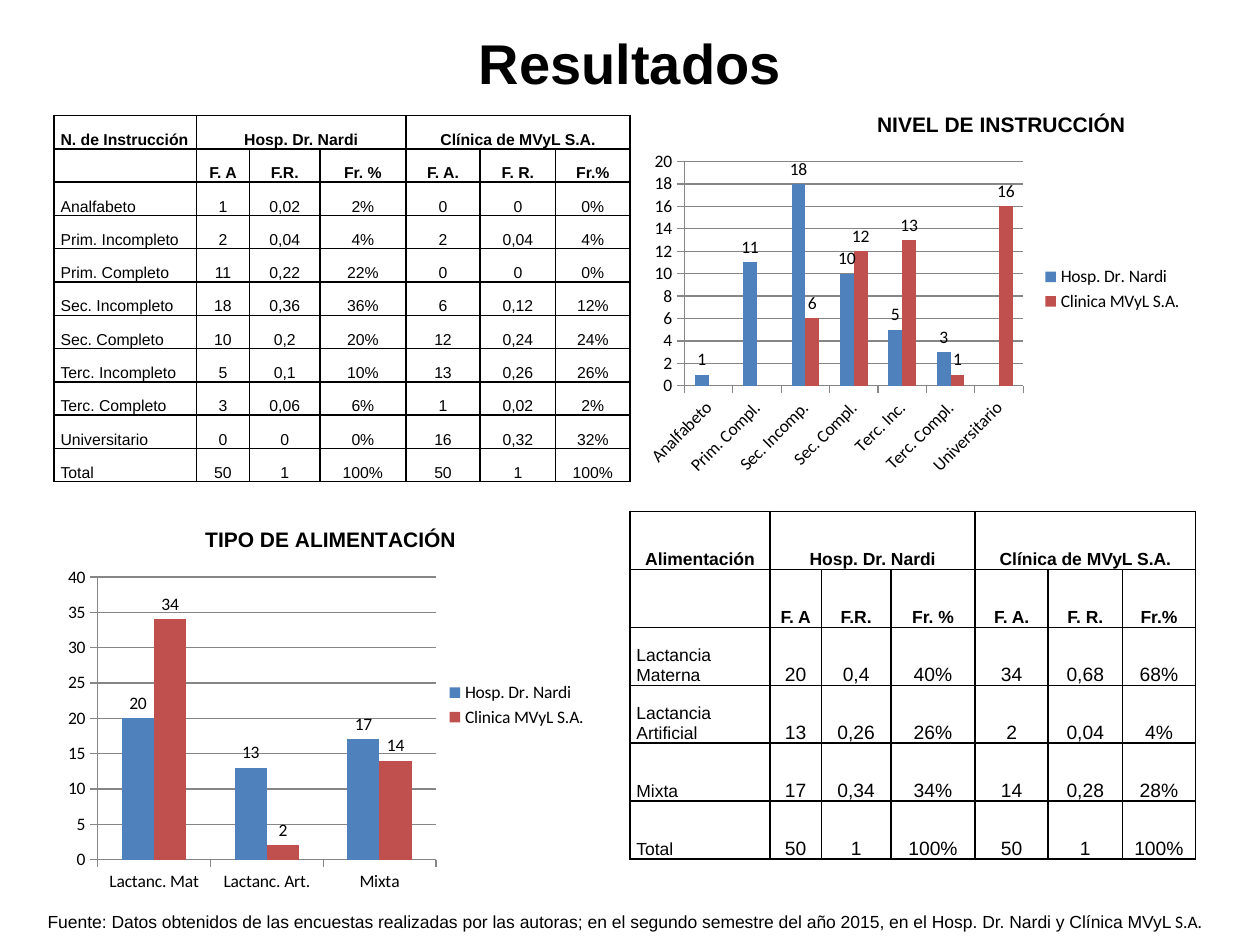
import dataclasses

import lxml.etree as etree
import pptx
import pptx.chart.data
import pptx.dml.color
import pptx.enum.chart
import pptx.enum.text
import pptx.oxml.ns
import pptx.util

Cm = pptx.util.Cm
Pt = pptx.util.Pt
RGB = pptx.dml.color.RGBColor
qn = pptx.oxml.ns.qn
ALIGN = pptx.enum.text.PP_ALIGN
ANCHOR = pptx.enum.text.MSO_ANCHOR


@dataclasses.dataclass(frozen=True)
class Theme:
    head_font: str = "Arial"
    chart_font: str = "Calibri"
    ink: str = "000000"
    axis: str = "868686"
    series: tuple = ("4F81BD", "C0504D")
    title: int = 32
    chart_title: int = 12
    text: int = 10


THEME = Theme()
HOSPITAL = "Hosp. Dr. Nardi"
CLINIC = "MVyL S.A."
SERIES_NAMES = (HOSPITAL, "Clinica " + CLINIC)
SAMPLE = 50  # people surveyed at each centre


def style_font(font, size, name=THEME.head_font, bold=False):
    font.name, font.size, font.bold = name, Pt(size), bold
    font.color.rgb = RGB.from_string(THEME.ink)


def add_run(p, text, size, name=THEME.head_font, bold=False):
    r = p.add_run()
    r.text = text
    style_font(r.font, size, name, bold)


def add_title(slide, box, text):
    sp = slide.shapes.title
    sp.left, sp.top, sp.width, sp.height = map(Cm, box)
    tf = sp.text_frame
    tf.vertical_anchor = ANCHOR.MIDDLE
    p = tf.paragraphs[0]
    p.alignment = ALIGN.CENTER
    add_run(p, text, THEME.title, bold=True)


def add_source(slide, box, parts):
    tf = slide.shapes.add_textbox(*map(Cm, box)).text_frame
    tf.word_wrap = True
    tf.margin_right = 0
    for text, name in parts:
        add_run(tf.paragraphs[0], text, THEME.text, name)


# Tables
def set_borders(cell):
    tc_pr = cell._tc.get_or_add_tcPr()
    for i, side in enumerate(("lnL", "lnR", "lnT", "lnB")):
        ln = etree.Element(qn("a:" + side), w=str(Pt(1)))
        fill = etree.SubElement(ln, qn("a:solidFill"))
        etree.SubElement(fill, qn("a:srgbClr"), val=THEME.ink)
        tc_pr.insert(i, ln)


def fill_cell(cell, text, size, bold, align, spacing):
    cell.fill.background()
    cell.vertical_anchor = ANCHOR.BOTTOM
    cell.margin_left = cell.margin_right = Cm(0.13)
    cell.margin_top = cell.margin_bottom = 0
    set_borders(cell)
    p = cell.text_frame.paragraphs[0]
    p.alignment = align
    p.line_spacing = spacing
    if text:
        add_run(p, text, size, bold=bold)
    else:
        etree.SubElement(p._p, qn("a:endParaRPr"), sz=str(size * 100))


def frequencies(count):
    share = count / SAMPLE
    return [str(count), f"{share:g}".replace(".", ","), f"{share:.0%}"]


def add_frequency_table(slide, box, heading, counts, widths, label_size,
                        number_size, spacing, heading_align):
    rows = [[heading, HOSPITAL, "", "", "Clínica de " + CLINIC, "", ""],
            ["", "F. A", "F.R.", "Fr. %", "F. A.", "F. R.", "Fr.%"]]
    for label, hospital, clinic in counts + [("Total", SAMPLE, SAMPLE)]:
        rows.append([label] + frequencies(hospital) + frequencies(clinic))

    table = slide.shapes.add_table(len(rows), len(widths), *map(Cm, box)).table
    table.first_row = table.horz_banding = False
    for column, width in zip(table.columns, widths):
        column.width = Cm(width)
    for i, row in enumerate(rows):
        table.rows[i].height = Cm(box[3] / len(rows))
        for j, text in enumerate(row):
            head = i < 2
            size = label_size if head or j == 0 else number_size
            align = ALIGN.CENTER if j else heading_align if head else ALIGN.LEFT
            fill_cell(table.cell(i, j), text, size, head, align, spacing)
    for j in (1, 4):
        table.cell(0, j).merge(table.cell(0, j + 2))


# Charts
def set_layout(parent, index, inner=False, **fractions):
    for old in parent.findall(qn("c:layout")):
        parent.remove(old)
    layout = etree.Element(qn("c:layout"))
    manual = etree.SubElement(layout, qn("c:manualLayout"))
    if inner:
        etree.SubElement(manual, qn("c:layoutTarget"), val="inner")
    for key in ("xMode", "yMode"):
        etree.SubElement(manual, qn("c:" + key), val="edge")
    for key, value in fractions.items():
        etree.SubElement(manual, qn("c:" + key), val=str(value))
    parent.insert(index, layout)


def add_column_chart(slide, box, title, categories, values, top, step,
                     title_x, plot, tilted=False):
    data = pptx.chart.data.CategoryChartData()
    data.categories = categories
    for name, series_values in zip(SERIES_NAMES, values):
        data.add_series(name, series_values)
    kind = pptx.enum.chart.XL_CHART_TYPE.COLUMN_CLUSTERED
    chart = slide.shapes.add_chart(kind, *map(Cm, box), data).chart
    style_font(chart.font, THEME.text, THEME.chart_font)

    chart.has_title = True
    p = chart.chart_title.text_frame.paragraphs[0]
    add_run(p, title, THEME.chart_title, bold=True)
    set_layout(chart.chart_title._element, 1, x=title_x, y=0.03)
    x, y, w, h = plot
    plot_area = chart._chartSpace.chart.plotArea
    set_layout(plot_area, 0, inner=True, x=x, y=y, w=w, h=h)

    chart.has_legend = True
    chart.legend.position = pptx.enum.chart.XL_LEGEND_POSITION.RIGHT
    chart.legend.include_in_layout = False

    # Axes
    value_axis, category_axis = chart.value_axis, chart.category_axis
    value_axis.minimum_scale, value_axis.maximum_scale = 0, top
    value_axis.major_unit = step
    value_axis.has_major_gridlines = True
    for axis in (value_axis, category_axis):
        axis.major_tick_mark = pptx.enum.chart.XL_TICK_MARK.OUTSIDE
        style_font(axis.tick_labels.font, THEME.text, THEME.chart_font)
    for part in (value_axis, category_axis, value_axis.major_gridlines):
        part.format.line.color.rgb = RGB.from_string(THEME.axis)
        part.format.line.width = Pt(0.75)
    if tilted:
        body = category_axis._element.find(qn("c:txPr")).find(qn("a:bodyPr"))
        body.set("rot", str(-45 * 60000))

    # Columns and their labels
    bars = chart.plots[0]
    bars.gap_width, bars.overlap, bars.vary_by_categories = 150, 0, False
    for series, color in zip(bars.series, THEME.series):
        series.format.fill.solid()
        series.format.fill.fore_color.rgb = RGB.from_string(color)
        labels = series.data_labels
        labels.show_value = True
        labels.position = pptx.enum.chart.XL_LABEL_POSITION.OUTSIDE_END
        style_font(labels.font, THEME.text, THEME.chart_font)


def main():
    prs = pptx.Presentation()
    prs.slide_width, prs.slide_height = Cm(25.4), Cm(19.05)
    slide = prs.slides.add_slide(prs.slide_layouts[5])
    add_title(slide, (1.27, 0.76, 22.86, 0.97), "Resultados")

    # Level of education
    add_column_chart(
        slide, (12.9, 1.93, 11.2, 7.8), "NIVEL DE INSTRUCCIÓN",
        ["Analfabeto", "Prim. Compl.", "Sec. Incomp.", "Sec. Compl.",
         "Terc. Inc.", "Terc. Compl.", "Universitario"],
        [(1, 11, 18, 10, 5, 3, None), (None, None, 6, 12, 13, 1, 16)],
        20, 2, 0.42, (0.08, 0.17, 0.61, 0.58), tilted=True)
    add_frequency_table(
        slide, (1.09, 2.33, 11.61, 7.39), "N. de Instrucción",
        [("Analfabeto", 1, 0), ("Prim. Incompleto", 2, 2),
         ("Prim. Completo", 11, 0), ("Sec. Incompleto", 18, 6),
         ("Sec. Completo", 10, 12), ("Terc. Incompleto", 5, 13),
         ("Terc. Completo", 3, 1), ("Universitario", 0, 16)],
        (2.87, 1.07, 1.42, 1.73, 1.5, 1.52, 1.5), 9, 9, 1.5, ALIGN.LEFT)

    # Type of feeding
    add_column_chart(
        slide, (1.09, 10.31, 11, 7.8), "TIPO DE ALIMENTACIÓN",
        ["Lactanc. Mat", "Lactanc. Art.", "Mixta"],
        [(20, 13, 17), (34, 2, 14)],
        40, 5, 0.27, (0.08, 0.17, 0.62, 0.73))
    add_frequency_table(
        slide, (12.7, 10.31, 11.4, 7.01), "Alimentación",
        [("Lactancia Materna", 20, 34), ("Lactancia Artificial", 13, 2),
         ("Mixta", 17, 14)],
        (2.82, 1.04, 1.4, 1.7, 1.47, 1.5, 1.47), 10, 11, 1, ALIGN.CENTER)

    name, suffix = CLINIC.split()
    add_source(slide, (0.71, 18.24, 23.8, 0.69), [
        ("Fuente: Datos obtenidos de las encuestas realizadas por las autoras; "
         "en el segundo semestre del año 2015, en el "
         f"{HOSPITAL} y Clínica {name} ", THEME.head_font),
        (suffix, THEME.chart_font)])
    prs.save("out.pptx")


if __name__ == "__main__":
    main()
